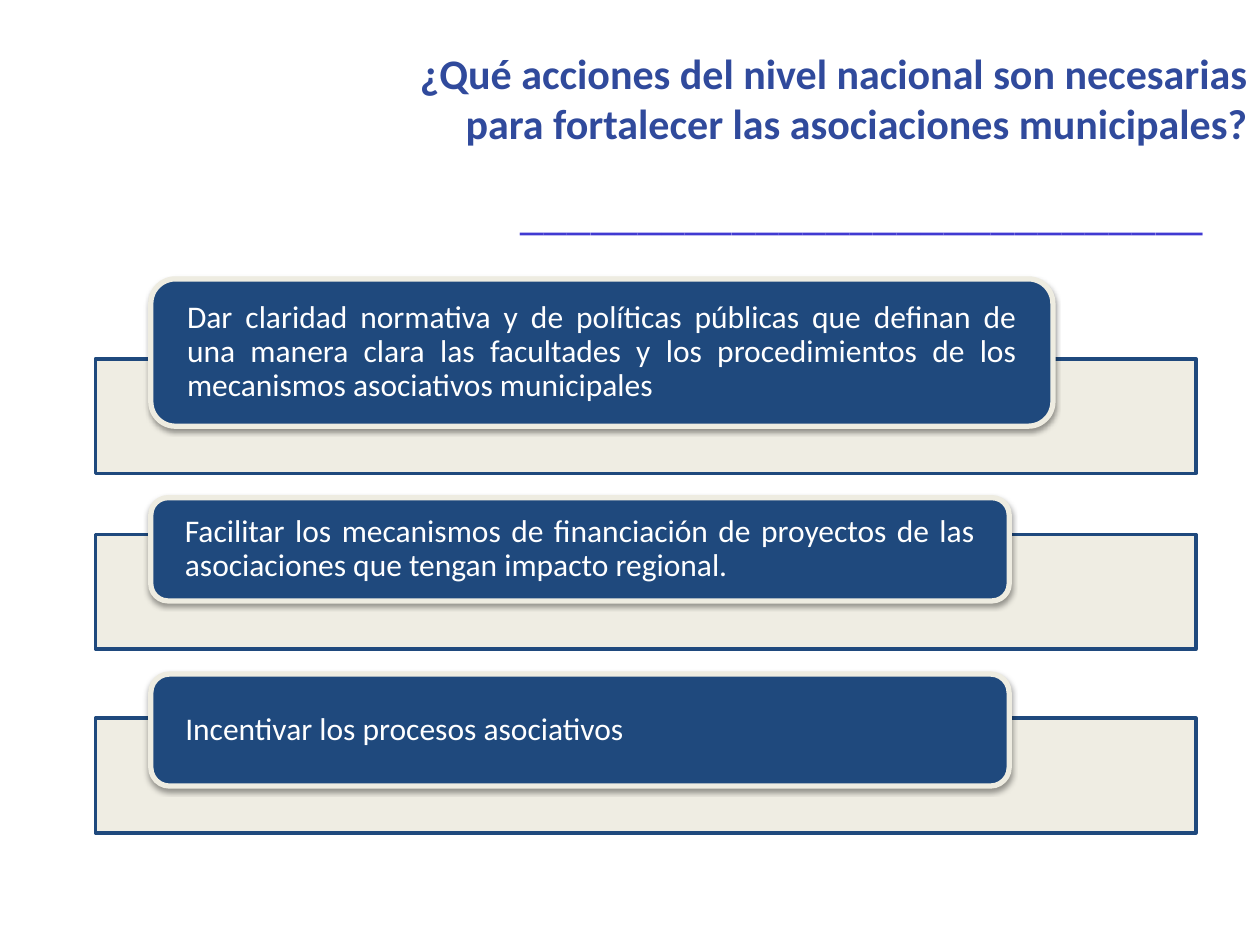
import pptx
import pptx.util
import pptx.dml.color
import pptx.enum.shapes
import pptx.enum.text
import pptx.oxml
import pptx.oxml.ns

Pt = pptx.util.Pt
SHAPE = pptx.enum.shapes.MSO_SHAPE
ALIGN = pptx.enum.text.PP_ALIGN
ANCHOR = pptx.enum.text.MSO_ANCHOR
qn = pptx.oxml.ns.qn
NS = pptx.oxml.ns.nsdecls("a")

COLORS = {"navy": "1F497D", "cream": "EEECE1", "white": "FFFFFF",
          "title": "304A9C", "rule": "413AD2"}
SHADOW = (f'<a:outerShdw {NS} blurRad="{Pt(3.1)}" dist="{Pt(1.6)}" dir="5400000" '
          'rotWithShape="0"><a:srgbClr val="000000"><a:alpha val="38000"/>'
          '</a:srgbClr></a:outerShdw>')


def add_box(kind, left, top, width, height, fill, line, weight):
    sp = s.shapes.add_shape(kind, Pt(left), Pt(top), Pt(width), Pt(height))
    sp.shadow.inherit = False
    sp.fill.solid()
    sp.fill.fore_color.rgb = pptx.dml.color.RGBColor.from_string(COLORS[fill])
    sp.line.color.rgb = pptx.dml.color.RGBColor.from_string(COLORS[line])
    sp.line.width = Pt(weight)
    return sp


def write(sp, text, size, color, align, anchor, bold=False):
    tf = sp.text_frame
    tf.word_wrap = True
    tf.vertical_anchor = anchor
    p = tf.paragraphs[0]
    p.text = text
    p.alignment = align
    font = p.runs[0].font
    font.name = "Calibri"
    font.size = Pt(size)
    font.bold = bold
    font.color.rgb = pptx.dml.color.RGBColor.from_string(COLORS[color])
    return tf


prs = pptx.Presentation()
prs.slide_width, prs.slide_height = Pt(720), Pt(540)
s = prs.slides.add_slide(prs.slide_layouts[6])

# Each action: band top, label top, label width, label height, text
actions = [
    (205, 159.4, 515.5, 84.2,
     "Dar claridad normativa y de políticas públicas que definan de una manera clara "
     "las facultades y los procedimientos de los mecanismos asociativos municipales"),
    (305.4, 284.4, 490.5, 59,
     "Facilitar los mecanismos de financiación de proyectos de las asociaciones "
     "que tengan impacto regional."),
    (410.4, 385.2, 490.5, 64, "Incentivar los procesos asociativos"),
]
for band_top, top, width, height, text in actions:
    band = add_box(SHAPE.RECTANGLE, 54.6, band_top, 628.8, 65.5, "cream", "navy", 2)
    band_color = band._element.spPr.find(qn("a:solidFill"))[0]
    band_color.append(pptx.oxml.parse_xml(f'<a:alpha {NS} val="90000"/>'))

    label = add_box(SHAPE.ROUNDED_RECTANGLE, 86.2, top, width, height, "navy", "cream", 3)
    label._element.spPr.find(qn("a:effectLst")).append(pptx.oxml.parse_xml(SHADOW))
    tf = write(label, text, 18, "white", ALIGN.JUSTIFY, ANCHOR.MIDDLE)
    tf.margin_left = tf.margin_right = Pt(16.6)
    tf.margin_top = tf.margin_bottom = 0
    tf.paragraphs[0].line_spacing = 0.9

title = s.shapes.add_textbox(Pt(226), Pt(35.5), Pt(494), Pt(41))
write(title, "¿Qué acciones del nivel nacional son necesarias para fortalecer "
      "las asociaciones municipales?", 24, "title", ALIGN.RIGHT, ANCHOR.MIDDLE, bold=True)

rule = s.shapes.add_textbox(Pt(36.7), Pt(104.2), Pt(657.4), Pt(62.6))
write(rule, "_" * 29, 27, "rule", ALIGN.RIGHT, ANCHOR.TOP).margin_top = 0

prs.save("out.pptx")
